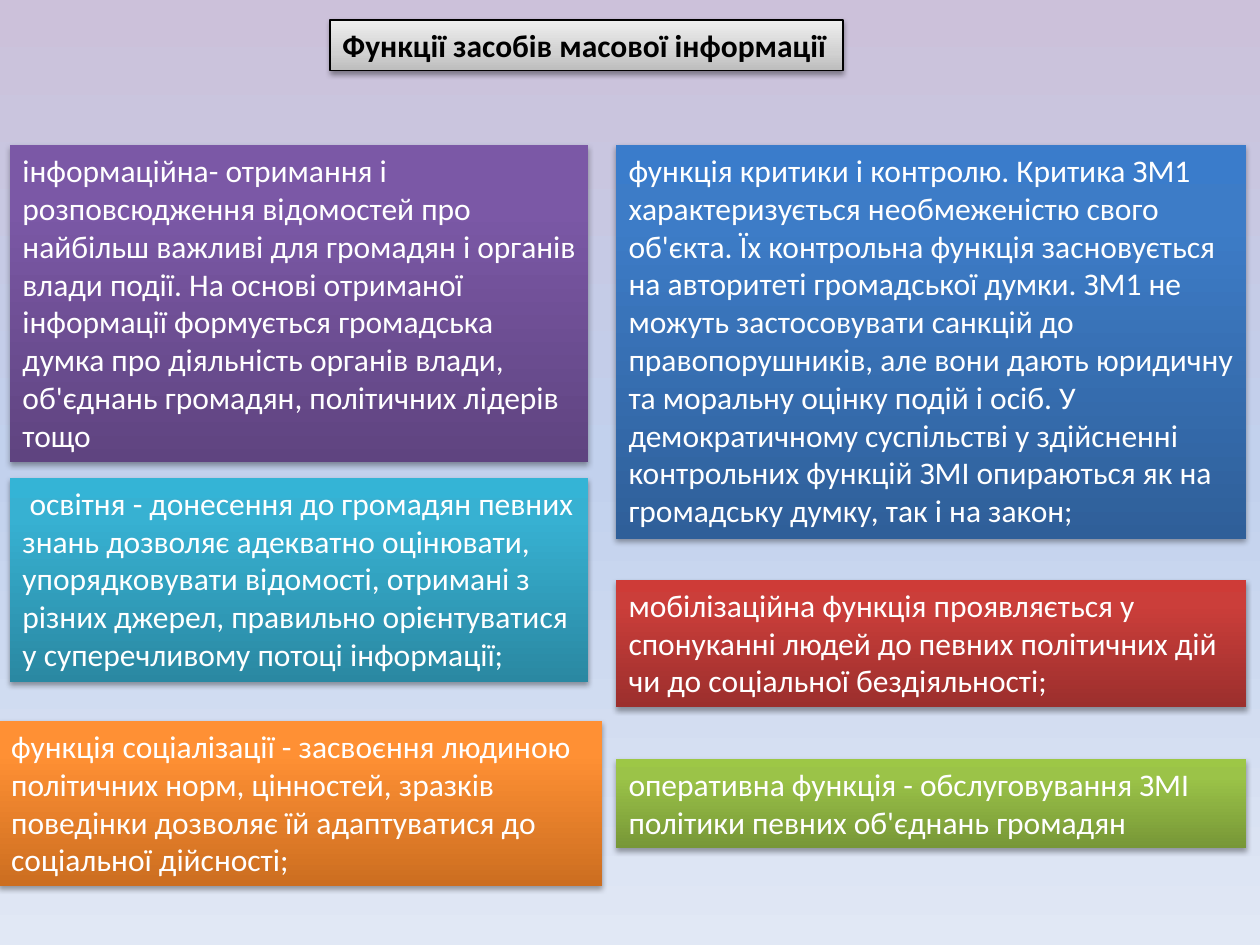
import pptx
import pptx.dml.color
import pptx.enum.shapes
import pptx.enum.text
import pptx.oxml
import pptx.oxml.ns
import pptx.util

Inches = pptx.util.Inches
Pt = pptx.util.Pt
qn = pptx.oxml.ns.qn


def tint(code):
    return pptx.dml.color.RGBColor.from_string(code)


def node(body):
    space = pptx.oxml.ns.nsdecls("a")
    return pptx.oxml.parse_xml(body.replace(">", f" {space}>", 1))


class Deck:
    """Holds the style and the current slide."""

    font = {"name": "Calibri", "size": Pt(18)}
    frame = {
        "auto_size": pptx.enum.text.MSO_AUTO_SIZE.SHAPE_TO_FIT_TEXT,
        "vertical_anchor": pptx.enum.text.MSO_ANCHOR.TOP,
    }

    def __init__(self, wide, high):
        self.file = pptx.Presentation()
        self.file.slide_width = Inches(wide)
        self.file.slide_height = Inches(high)
        self.slide = self.file.slides.add_slide(self.file.slide_layouts[6])

    def blend(self, fill, root, stops, angle):
        fill.gradient()
        fill.gradient_angle = angle
        group = root.find(".//" + qn("a:gsLst"))
        for old in list(group):
            group.remove(old)
        for place, code in stops:
            group.append(node(
                f'<a:gs pos="{place * 1000}"><a:srgbClr val="{code}"/></a:gs>'))

    def back(self, stops):
        self.blend(self.slide.background.fill, self.slide.element, stops, 270)

    def shade(self, shape, alpha, drop):
        shape.shadow.inherit = False
        shape.element.find(".//" + qn("a:effectLst")).append(node(
            f'<a:outerShdw blurRad="{Pt(3.1)}" dist="{Pt(drop)}" dir="5400000"'
            f' rotWithShape="0"><a:srgbClr val="000000">'
            f'<a:alpha val="{alpha * 1000}"/></a:srgbClr></a:outerShdw>'))

    def label(self, shape, text, wrap, color="FFFFFF", **extra):
        frame = shape.text_frame
        for key, value in {**self.frame, "word_wrap": wrap}.items():
            setattr(frame, key, value)
        line = frame.paragraphs[0]
        line.alignment = pptx.enum.text.PP_ALIGN.LEFT
        run = line.add_run()
        run.text = text
        for key, value in {**self.font, **extra}.items():
            setattr(run.font, key, value)
        run.font.color.rgb = tint(color)

    def box(self, area, stops):
        kind = pptx.enum.shapes.MSO_SHAPE.RECTANGLE
        shape = self.slide.shapes.add_shape(kind, *map(Inches, area))
        self.blend(shape.fill, shape.element, stops, 90)
        return shape

    def title(self, area, text, stops):
        shape = self.box(area, stops)
        shape.line.color.rgb = tint("000000")
        shape.line.width = Pt(0.75)
        self.shade(shape, 38, 1.6)
        self.label(shape, text, False, color="000000", bold=True)

    def card(self, area, text, codes):
        shape = self.box(area, zip((0, 80, 100), codes))
        shape.line.fill.background()
        self.shade(shape, 35, 1.8)
        self.label(shape, text, True)


LEFT, RIGHT = (0.08, 4.59), (4.89, 5)
CARDS = [
    (LEFT, 1.15, 2.52, ("5F4480", "7B58A6", "7C57A8"),
     "інформаційна- отримання і розповсюдження відомостей про найбільш "
     "важливі для громадян і органів влади події. На основі отриманої "
     "інформації формується громадська думка про діяльність органів влади, "
     "об'єднань громадян, політичних лідерів тощо"),
    (LEFT, 3.79, 1.62, ("2A88A2", "37B1D2", "34B4D6"),
     " освітня - донесення до громадян певних знань дозволяє адекватно "
     "оцінювати, упорядковувати відомості, отримані з різних джерел, "
     "правильно орієнтуватися у суперечливому потоці інформації;"),
    ((-0.01, 4.79), 5.72, 1.31, ("CC6E20", "FF9034", "FF9136"),
     "функція соціалізації - засвоєння людиною політичних норм, цінностей, "
     "зразків поведінки дозволяє їй адаптуватися до соціальної дійсності;"),
    (RIGHT, 1.15, 3.13, ("2F5F99", "3D7CC7", "3A7CCB"),
     "функція критики і контролю. Критика ЗМ1 характеризується необмеженістю "
     "свого об'єкта. Їх контрольна функція засновується на авторитеті "
     "громадської думки. ЗМ1 не можуть застосовувати санкцій до "
     "правопорушників, але вони дають юридичну та моральну оцінку подій і "
     "осіб. У демократичному суспільстві у здійсненні контрольних функцій "
     "ЗМІ опираються як на громадську думку, так і на закон;"),
    (RIGHT, 4.6, 1.01, ("9C2F2D", "CB3E3A", "CE3B37"),
     "мобілізаційна функція проявляється у спонуканні людей до певних "
     "політичних дій чи до соціальної бездіяльності;"),
    (RIGHT, 6.02, 0.71, ("779737", "9BC348", "9DC746"),
     "оперативна функція - обслуговування ЗМІ політики певних об'єднань "
     "громадян"),
]


def main():
    deck = Deck(10, 7.5)
    deck.back([(0, "CCC1DA"), (50, "C2D1ED"), (100, "E1E8F5")])
    deck.title((2.62, 0.16, 4.07, 0.4), "Функції засобів масової інформації",
               [(0, "BDBDBD"), (35, "D1D1D1"), (100, "EEEEEE")])
    for (left, wide), top, high, codes, text in CARDS:
        deck.card((left, top, wide, high), text, codes)
    deck.file.save("out.pptx")


if __name__ == "__main__":
    main()
